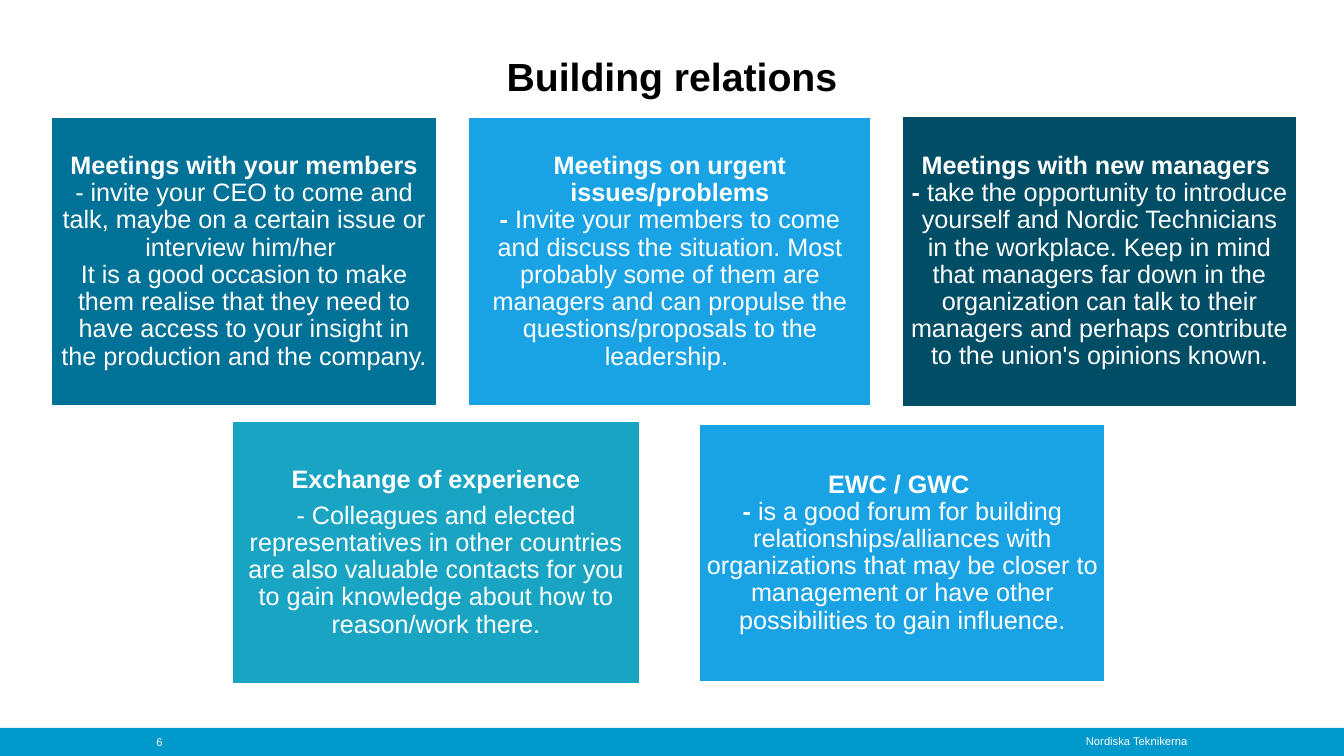
from pptx import Presentation
from pptx.dml.color import RGBColor
from pptx.enum.shapes import MSO_SHAPE
from pptx.enum.text import MSO_ANCHOR, PP_ALIGN
from pptx.util import Inches, Pt

WIDTH, HEIGHT = Inches(13.33), Inches(7.5)
WHITE = RGBColor(0xFF, 0xFF, 0xFF)
BLACK = RGBColor(0x00, 0x00, 0x00)
BAR_BLUE = RGBColor(0x00, 0x99, 0xCC)
TEAL = RGBColor(0x00, 0x71, 0x97)
SKY = RGBColor(0x1A, 0xA3, 0xE4)
NAVY = RGBColor(0x00, 0x4D, 0x66)
TURQUOISE = RGBColor(0x1A, 0xA4, 0xC4)

CARDS = [
    ((3.83, 15.47, 28.66, 38.27), TEAL, [
        ("Meetings with your members\v",
         "- invite your CEO to come and talk, maybe on a certain issue or interview him/her \n"
         "It is a good occasion to make them realise that they need to have access to your "
         "insight in the production and the company.")]),
    ((34.88, 15.47, 29.93, 38.27), SKY, [
        ("Meetings on urgent issues/problems\v- ",
         "Invite your members to come and discuss the situation. Most probably some of them "
         "are managers and can propulse the questions/proposals to the leadership. ")]),
    ((67.14, 15.33, 29.33, 38.53), NAVY, [
        ("Meetings with new managers \v- ",
         "take the opportunity to introduce yourself and Nordic Technicians in the workplace. "
         "Keep in mind that managers far down in the organization can talk to their managers "
         "and perhaps contribute to the union's opinions known.")]),
    ((17.25, 55.73, 30.38, 34.67), TURQUOISE, [
        ("Exchange of experience", ""),
        ("", "- Colleagues and elected representatives in other countries are also valuable "
             "contacts for you to gain knowledge about how to reason/work there.")]),
    ((52.06, 56.13, 30.16, 34), SKY, [
        ("EWC / GWC \v- ",
         "is a good forum for building relationships/alliances with organizations that may "
         "be closer to management or have other possibilities to gain influence.")]),
]


def place(box):
    x, y, w, h = (share / 100 for share in box)
    return int(WIDTH * x), int(HEIGHT * y), int(WIDTH * w), int(HEIGHT * h)


def style_run(r, size, color, bold=False):
    r.font.name = "Arial"
    r.font.size = Pt(size)
    r.font.bold = bold
    r.font.color.rgb = color


def set_margins(tf, margin):
    tf.margin_left = tf.margin_right = margin
    tf.margin_top = tf.margin_bottom = margin


def add_rect(s, box, fill):
    sp = s.shapes.add_shape(MSO_SHAPE.RECTANGLE, *place(box))
    sp.shadow.inherit = False
    sp.fill.solid()
    sp.fill.fore_color.rgb = fill
    sp.line.fill.background()
    return sp


def add_label(s, box, text, size, color, align, anchor, bold=False):
    tf = s.shapes.add_textbox(*place(box)).text_frame
    tf.word_wrap = True
    tf.vertical_anchor = anchor
    set_margins(tf, 0)
    tf.text = text
    p = tf.paragraphs[0]
    p.alignment = align
    style_run(p.runs[0], size, color, bold)
    return p


def fill_paragraph(p, heading, body):
    p.alignment = PP_ALIGN.CENTER
    p.line_spacing = 0.9
    p.space_after = Pt(6.3)
    p.text = heading
    for r in p.runs:
        style_run(r, 18, WHITE, True)
    for i, line in enumerate(body.split("\n") if body else []):
        if i:
            p.add_line_break()
        r = p.add_run()
        r.text = line
        style_run(r, 18, WHITE)


def add_card(s, box, fill, paragraphs):
    sp = add_rect(s, box, fill)
    sp.line.color.rgb = WHITE
    sp.line.width = Pt(1)
    tf = sp.text_frame
    tf.word_wrap = True
    tf.vertical_anchor = MSO_ANCHOR.MIDDLE
    set_margins(tf, Inches(0.07))
    for i, (heading, body) in enumerate(paragraphs):
        p = tf.add_paragraph() if i else tf.paragraphs[0]
        fill_paragraph(p, heading, body)


def main():
    prs = Presentation()
    prs.slide_width, prs.slide_height = WIDTH, HEIGHT
    s = prs.slides.add_slide(prs.slide_layouts[6])
    add_rect(s, (0, 96.27, 100, 3.73), BAR_BLUE)
    add_label(s, (11.63, 97.33, 4.43, 1.73), "6", 8, WHITE,
              PP_ALIGN.LEFT, MSO_ANCHOR.MIDDLE)
    add_label(s, (79.52, 97.2, 8.85, 1.73), "Nordiska Teknikerna", 8, WHITE,
              PP_ALIGN.RIGHT, MSO_ANCHOR.TOP)
    for box, fill, paragraphs in CARDS:
        add_card(s, box, fill, paragraphs)
    title = add_label(s, (18.98, 1.47, 62.04, 16.53), "Building relations", 28, BLACK,
                      PP_ALIGN.CENTER, MSO_ANCHOR.MIDDLE, True)
    title.line_spacing = 1.1
    prs.save("out.pptx")


if __name__ == "__main__":
    main()
